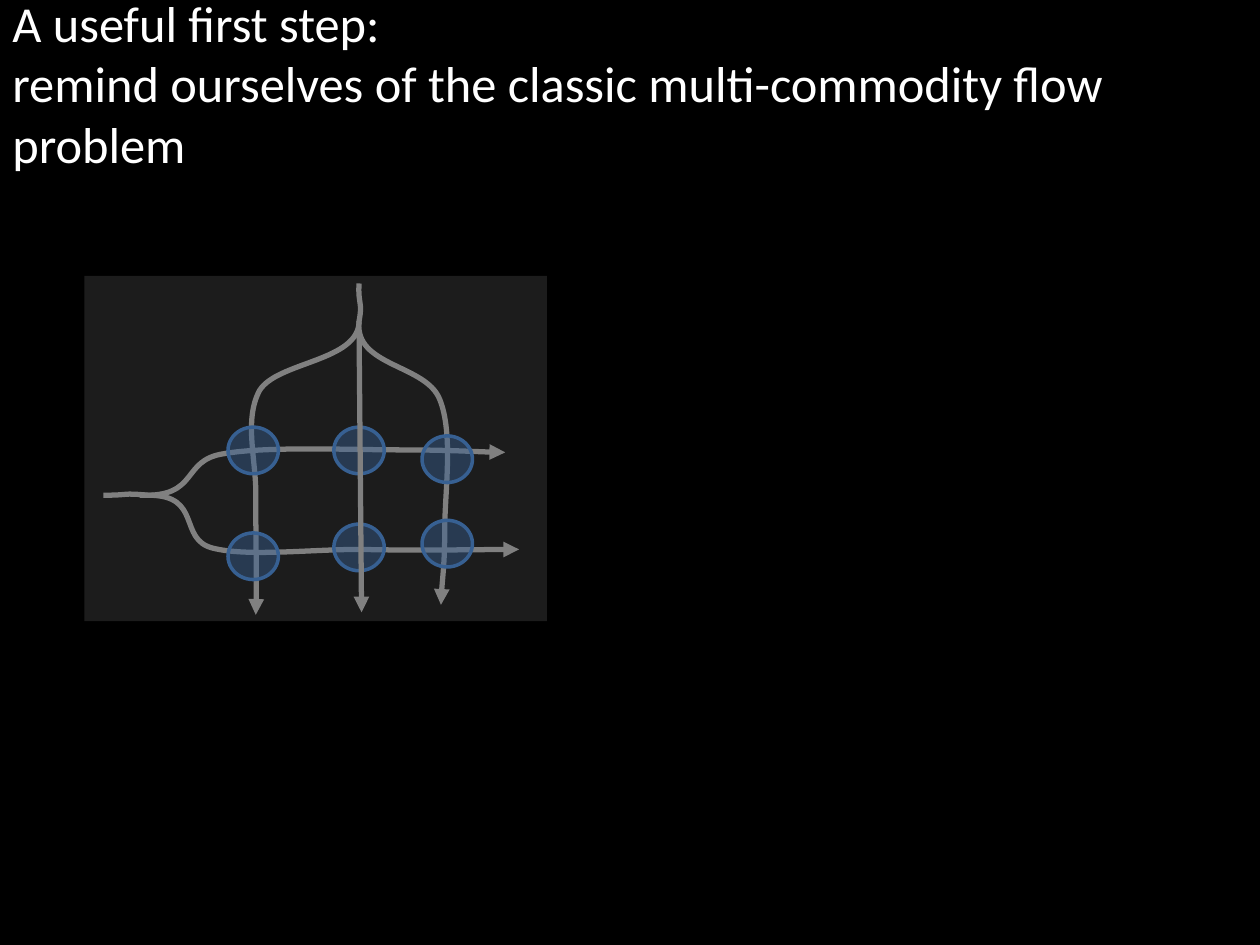
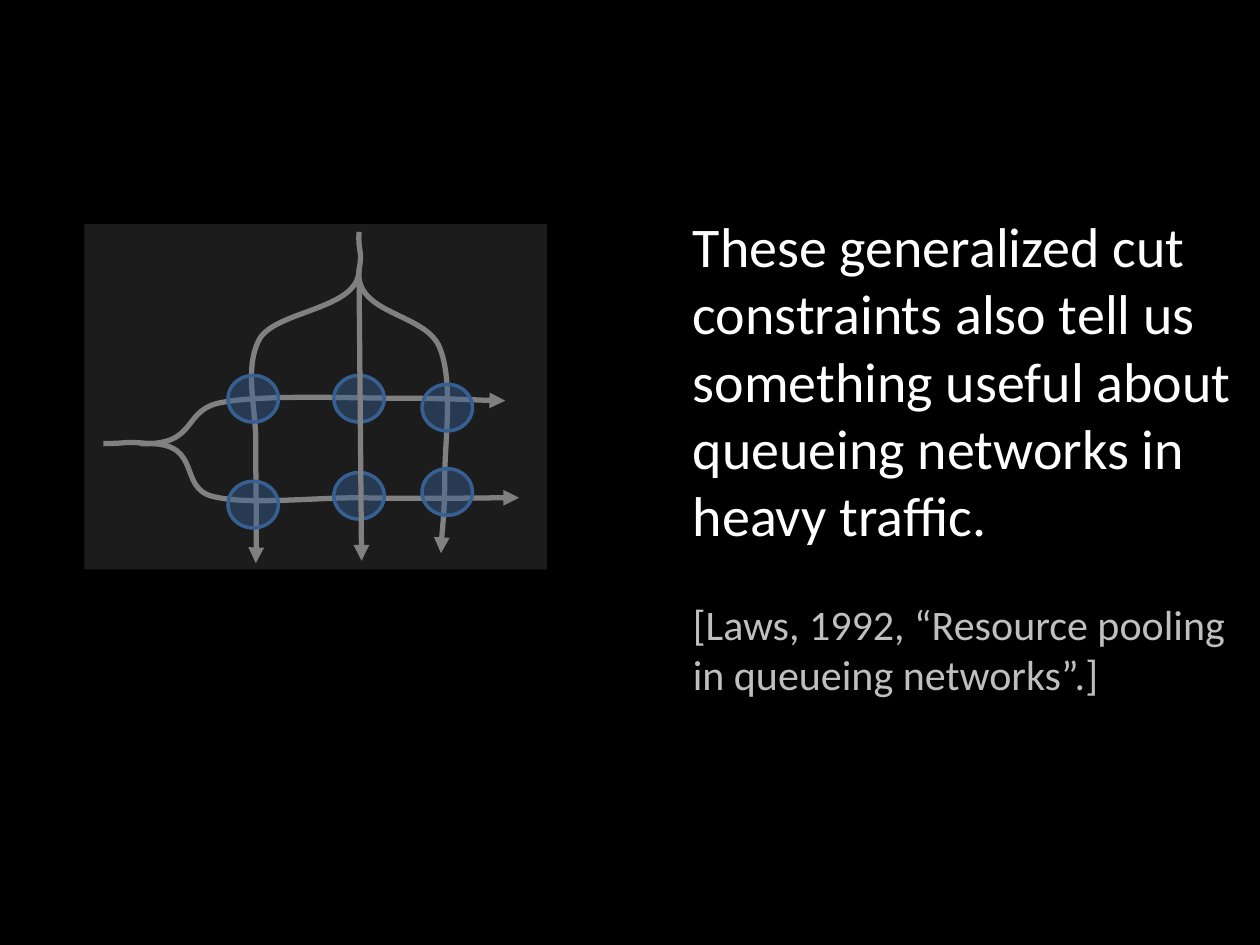
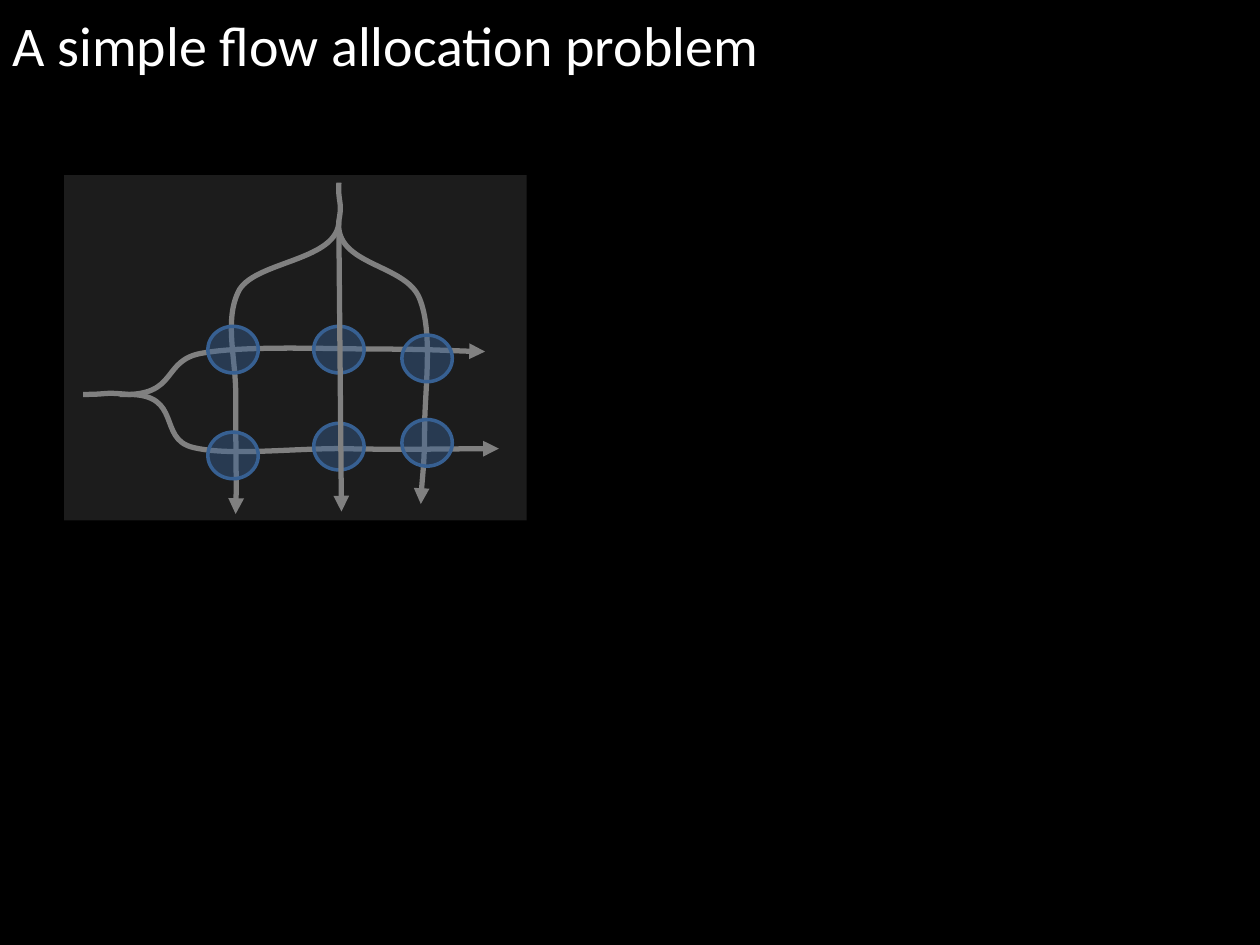
from lxml import etree
from pptx import Presentation
from pptx.dml.color import RGBColor
from pptx.enum.shapes import MSO_CONNECTOR, MSO_SHAPE
from pptx.enum.text import MSO_ANCHOR
from pptx.oxml.ns import qn
from pptx.util import Pt

RECT, OVAL = MSO_SHAPE.RECTANGLE, MSO_SHAPE.OVAL
STRAIGHT = MSO_CONNECTOR.STRAIGHT
MIDDLE = MSO_ANCHOR.MIDDLE

PX = 9144
FONT = "Calibri"
BLACK, WHITE, SILVER = "000000", "FFFFFF", "BFBFBF"
PANEL, FLOW, NODE = "1C1C1C", "808080", "376092"

DOWN = [
    [(218, 6), (217, 23), (221, 20), (218, 36), (218, 68), (153, 68), (139, 91),
     (126, 115), (137, 148), (136, 177), (136, 207), (137, 254), (136, 269)],
    [(218, 36), (214, 72), (271, 70), (282, 98), (293, 125), (286, 172), (286, 200),
     (286, 227), (283, 251), (283, 261)],
]
ACROSS = [
    [(15, 174), (38, 174), (28, 172), (51, 174), (94, 174), (74, 209), (102, 216),
     (130, 223), (179, 217), (219, 217), (260, 218), (324, 217), (345, 217)],
    [(44, 174), (92, 176), (76, 146), (111, 141), (145, 135), (213, 138), (250, 138),
     (287, 138), (320, 140), (334, 140)],
]
NODES = [(114, 120), (198, 120), (198, 197), (114, 204), (268, 127), (268, 194)]


def color(code):
    """Turn a hex string into a colour."""
    return RGBColor.from_string(code)


def turn(knots):
    """Turn knots by a quarter about the middle of their bounds."""
    mid_x, mid_y = ((min(axis) + max(axis)) / 2 for axis in zip(*knots))
    return [(mid_x + mid_y - y, mid_y - mid_x + x) for x, y in knots]


def bend(item):
    """Merge each three straight segments into one cubic curve."""
    lines = list(item.element.iter(qn("a:lnTo")))
    for i in range(0, len(lines), 3):
        cubic = etree.Element(qn("a:cubicBezTo"))
        lines[i].addprevious(cubic)
        for line in lines[i:i + 3]:
            cubic.append(line[0])
            line.getparent().remove(line)


class Deck:
    """Holds the style and the current slide."""

    def __init__(self):
        """Start an empty deck."""
        self.file = Presentation()
        self.file.slide_width = 1000 * PX
        self.file.slide_height = 750 * PX

    def page(self):
        """Add a black slide."""
        self.slide = self.file.slides.add_slide(self.file.slide_layouts[6])
        fill = self.slide.background.fill
        fill.solid()
        fill.fore_color.rgb = color(BLACK)

    def text(self, left, top, width, height, lines, gap=0):
        """Add a text box with one (text, size, colour) per paragraph."""
        box = self.slide.shapes.add_textbox(left * PX, top * PX, width * PX, height * PX)
        frame = box.text_frame
        frame.word_wrap = True
        frame.vertical_anchor = MIDDLE
        for i, (words, size, code) in enumerate(lines):
            para = frame.add_paragraph() if i else frame.paragraphs[0]
            para.text = words
            para.space_before = Pt(gap if i else 0)
            para.font.name = FONT
            para.font.size = Pt(size)
            para.font.color.rgb = color(code)

    def shape(self, kind, left, top, width, height, code):
        """Add a filled shape to the group without an outline."""
        item = self.group.shapes.add_shape(kind, left * PX, top * PX, width * PX, height * PX)
        item.shadow.inherit = False
        item.fill.solid()
        item.fill.fore_color.rgb = color(code)
        item.line.fill.background()
        return item

    def node(self, left, top):
        """Add a see-through circle with an outline."""
        item = self.shape(OVAL, left, top, 40, 37, NODE)
        tint = next(item.element.iter(qn("a:srgbClr")))
        etree.SubElement(tint, qn("a:alpha"), val="45000")
        item.line.color.rgb = color(NODE)
        item.line.width = Pt(2)

    def arrow(self, item):
        """Style a line as a flow with an arrowhead."""
        item.line.color.rgb = color(FLOW)
        item.line.width = Pt(3)
        etree.SubElement(item.get_or_add_ln(), qn("a:tailEnd"), type="triangle")

    def curve(self, left, top, knots, angle=0):
        """Add a curved flow to the group."""
        points = [((left + x) * PX, (top + y) * PX) for x, y in knots]
        pen = self.group.shapes.build_freeform(*points[0], scale=1.0)
        pen.add_line_segments(points[1:], close=False)
        item = pen.convert_to_shape()
        bend(item)
        item.rotation = angle
        item.shadow.inherit = False
        item.fill.background()
        self.arrow(item)

    def line(self, *ends):
        """Add a straight flow to the group."""
        item = self.group.shapes.add_connector(STRAIGHT, *(end * PX for end in ends))
        self.arrow(item)
        etree.SubElement(item.element.spPr, qn("a:effectLst"))

    def graph(self, left, top):
        """Draw the flow network on its panel."""
        self.group = self.slide.shapes.add_group_shape()
        self.shape(RECT, left, top, 367, 274, PANEL)
        for route in DOWN:
            self.curve(left, top, route)
        for route in ACROSS:
            self.curve(left, top, turn(route), 270)
        for x, y in NODES:
            self.node(left + x, top + y)
        self.line(left + 218, top + 47, left + 220, top + 267)


def main():
    """Build the three slides."""
    deck = Deck()
    deck.page()
    deck.graph(67, 219)
    deck.text(0, 0, 1000, 131, [
        ("A useful first step:\vremind ourselves of the classic multi-commodity flow problem",
         28.8, WHITE)])

    deck.page()
    deck.graph(67, 178)
    deck.text(540, 29, 460, 665, [
        ("These generalized cut constraints also tell us something useful about "
         "queueing networks in heavy traffic.", 32, WHITE),
        ("[Laws, 1992, “Resource pooling in queueing networks”.]", 24, SILVER)], gap=29)

    deck.page()
    deck.text(0, 0, 1000, 70, [("A simple flow allocation problem", 32, WHITE)])
    deck.graph(51, 139)
    deck.file.save("out.pptx")


if __name__ == "__main__":
    main()
